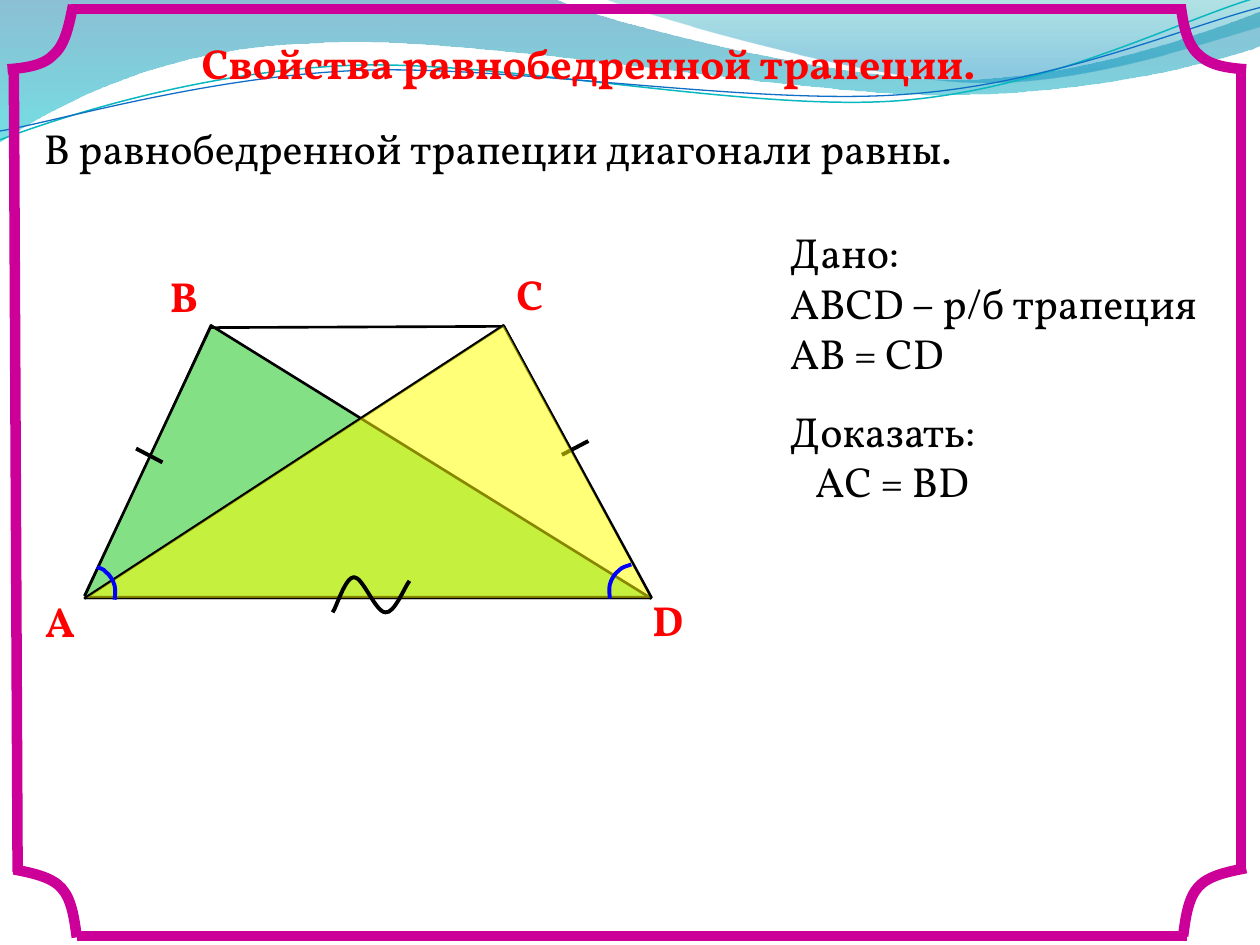
from lxml.etree import SubElement
from pptx import Presentation
from pptx.dml.color import RGBColor
from pptx.enum.shapes import MSO_CONNECTOR
from pptx.enum.text import MSO_ANCHOR, MSO_AUTO_SIZE, PP_ALIGN
from pptx.oxml.ns import qn
from pptx.util import Emu, Pt

PX = 9144  # 100 px to the inch
FONT = "Vollkorn"
BLACK, RED, BLUE, MAGENTA = "000000", "FF0000", "0000FF", "CC0099"


def px(n):
    return Emu(n * PX)


def rgb(color):
    return RGBColor.from_string(color)


class SlideBuilder:
    def __init__(self, prs):
        self.s = prs.slides.add_slide(prs.slide_layouts[5])

    def format_line(self, sp, color, width):
        sp.line.color.rgb = rgb(color)
        sp.line.width = Pt(width)

    def line(self, start, end, color=BLACK, width=1.5):
        sp = self.s.shapes.add_connector(
            MSO_CONNECTOR.STRAIGHT, *map(px, start + end))
        self.format_line(sp, color, width)
        SubElement(sp._element.spPr, qn("a:effectLst"))

    def outline(self, start, segments, fill=(), line=None, closed=False):
        """Draw a freeform; a segment of 2 numbers is a line, of 6 a Bezier curve.

        fill lists (color, opacity in percent, position): one solid, two a gradient.
        """
        points = [seg[i:i + 2] for seg in segments for i in range(0, len(seg), 2)]
        builder = self.s.shapes.build_freeform(*start, scale=PX)
        builder.add_line_segments(points, close=closed)
        sp = builder.convert_to_shape()
        sp.shadow.inherit = False
        steps = iter(list(sp._element.iter(qn("a:lnTo"))))
        for seg in segments:
            first = next(steps)
            if len(seg) == 6:
                first.tag = qn("a:cubicBezTo")
                for _ in range(2):
                    step = next(steps)
                    first.append(step[0])
                    step.getparent().remove(step)
        self.fill(sp, fill)
        if line:
            self.format_line(sp, *line)
        else:
            sp.line.fill.background()

    def fill(self, sp, stops):
        if not stops:
            sp.fill.background()
            return
        if len(stops) == 1:
            sp.fill.solid()
            sp.fill.fore_color.rgb = rgb(stops[0][0])
        else:
            sp.fill.gradient()
            sp.fill.gradient_angle = 270
            for stop, (color, _, position) in zip(sp.fill.gradient_stops, stops):
                stop.color.rgb = rgb(color)
                stop.position = position
        colors = list(sp._element.spPr.iter(qn("a:srgbClr")))
        for clr, (_, opacity, _) in zip(colors, stops):
            SubElement(clr, qn("a:alpha"), val=str(opacity * 1000))

    def fill_text(self, sp, lines, color, bold, wrap):
        """Fill a text frame; a line is (text, left indent in px)."""
        tf = sp.text_frame
        tf.word_wrap = wrap
        tf.auto_size = MSO_AUTO_SIZE.SHAPE_TO_FIT_TEXT
        tf.vertical_anchor = MSO_ANCHOR.TOP
        for i, (text, indent) in enumerate(lines):
            p = tf.add_paragraph() if i else tf.paragraphs[0]
            p.alignment = PP_ALIGN.LEFT
            if indent:
                p._p.get_or_add_pPr().set("marL", str(px(indent)))
            r = p.add_run()
            r.text = text
            r.font.name, r.font.size, r.font.bold = FONT, Pt(24), bold
            r.font.color.rgb = rgb(color)

    def title(self, text, box):
        sp = self.s.shapes.title
        sp.left, sp.top, sp.width, sp.height = map(px, box)
        self.s.shapes._spTree.append(sp._element)  # in front of the waves
        self.fill_text(sp, [(text, 0)], RED, True, True)

    def text(self, lines, box, color=BLACK, bold=False, wrap=False):
        sp = self.s.shapes.add_textbox(*map(px, box))
        self.fill_text(sp, lines, color, bold, wrap)


def draw_waves(b):
    b.outline((0, 0), [
        (440, -1), (476, 17, 664, 63, 758, 63), (853, 63, 958, 26, 1000, 9),
        (1001, 36), (983, 44, 870, 76, 746, 75), (622, 75, 382, 28, 257, 34),
        (129, 36, 46, 83, -1, 113)],
        fill=[("0074A1", 45, 0), ("00C6CF", 55, 1)], closed=True)
    b.outline((479, -1), [
        (509, 11, 682, 62, 769, 65), (856, 69, 961, 32, 1000, 21), (1000, 0)],
        fill=[("00A1A9", 30, 0), ("008BBF", 45, 0.8)], closed=True)
    b.outline((0, 111), [
        (48, 93, 158, 57, 277, 52), (395, 47, 593, 89, 713, 80),
        (833, 71, 938, 15, 998, -2)], line=("0AB8BF", 0.85))
    b.outline((0, 104), [
        (47, 96, 164, 61, 283, 56), (403, 51, 597, 84, 717, 75),
        (836, 67, 941, 21, 1000, 6)], line=("0F6FC6", 0.75))


def draw_trapezoid(b):
    A, B, C, D = (67, 475), (167, 258), (400, 258), (517, 475)
    b.outline(A, [D, B], [("33CC33", 60, 0)], (BLACK, 0.75), closed=True)
    b.outline((67, 473), [(167, 260), (400, 259), (517, 474), (68, 474)],
              line=(BLACK, 1.5))
    for letter, x, y in (("A", 26, 468), ("В", 125, 210),
                         ("С", 400, 208), ("D", 508, 467)):
        b.text([(letter, 0)], (x, y, 44, 50), RED, bold=True)
    b.line((108, 356), (129, 367), width=2.25)
    b.line((467, 350), (446, 361), width=2.25)
    b.line(A, C)
    b.line(B, D)
    b.outline(A, [C, D], [("FFFF00", 53, 0)], (BLACK, 0.75), closed=True)
    b.outline((264, 486), [
        (267, 482, 274, 458, 281, 458), (288, 458, 298, 486, 306, 486),
        (313, 487, 321, 466, 325, 461)], line=(BLACK, 2.25))
    b.outline((501, 448), [
        (499, 449, 493, 450, 491, 453), (488, 455, 485, 460, 484, 464),
        (483, 468, 484, 473, 484, 475)], line=(BLUE, 2.25))
    b.outline((77, 450), [
        (78, 451, 82, 451, 84, 454), (87, 456, 90, 461, 91, 465),
        (92, 469, 91, 474, 91, 476)], line=(BLUE, 2.25))


def draw_frame(b):
    for start, end in (((56, 7), (941, 7)), ((61, 743), (942, 743)),
                       ((985, 55), (985, 692)), ((11, 55), (14, 692))):
        b.line(start, end, MAGENTA, 6)
    for start, *curves in (
            ((11, 690), (26, 693, 41, 696, 49, 705), (57, 714, 59, 729, 61, 744)),
            ((989, 689), (974, 692, 959, 695, 951, 704), (943, 713, 941, 728, 939, 743)),
            ((937, 4), (939, 19, 942, 35, 951, 43), (960, 52, 974, 54, 989, 55)),
            ((58, 4), (55, 19, 52, 35, 43, 43), (35, 52, 20, 54, 6, 55))):
        b.outline(start, curves, line=(MAGENTA, 6))


def main():
    prs = Presentation()
    prs.slide_width, prs.slide_height = px(1000), px(750)
    b = SlideBuilder(prs)
    draw_waves(b)
    b.title("Свойства равнобедренной трапеции.", (150, 25, 742, 50))
    b.text([("В равнобедренной трапеции диагонали равны.", 0)],
           (25, 92, 925, 50), wrap=True)
    draw_trapezoid(b)
    b.text([("Дано:", 0), ("АВСD – р/б трапеция", 0), ("AB = CD", 0)],
           (617, 175, 351, 130))
    b.text([("Доказать:", 0), ("АC = BD", 20)], (617, 317, 179, 90))
    draw_frame(b)
    prs.save("out.pptx")


if __name__ == "__main__":
    main()
